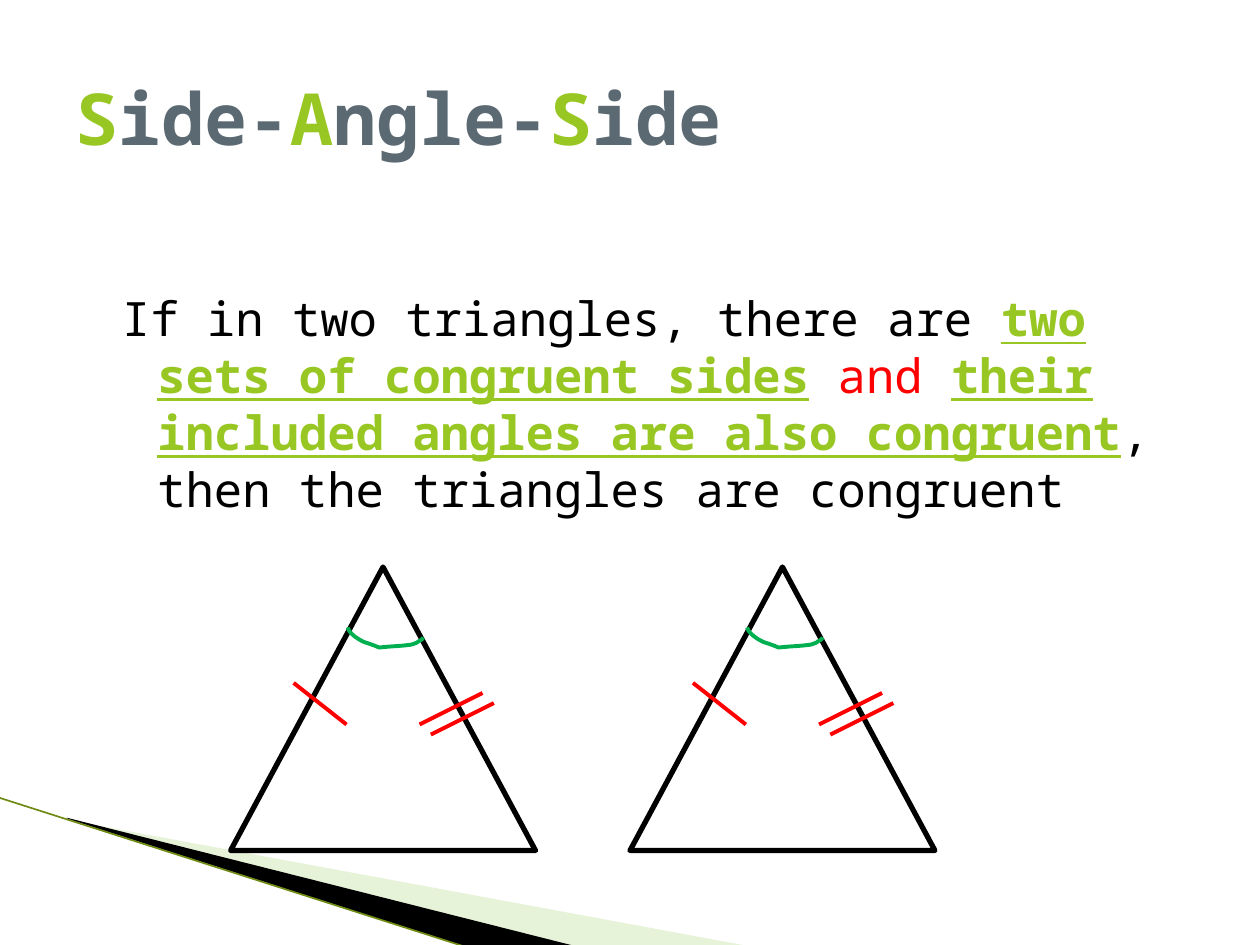
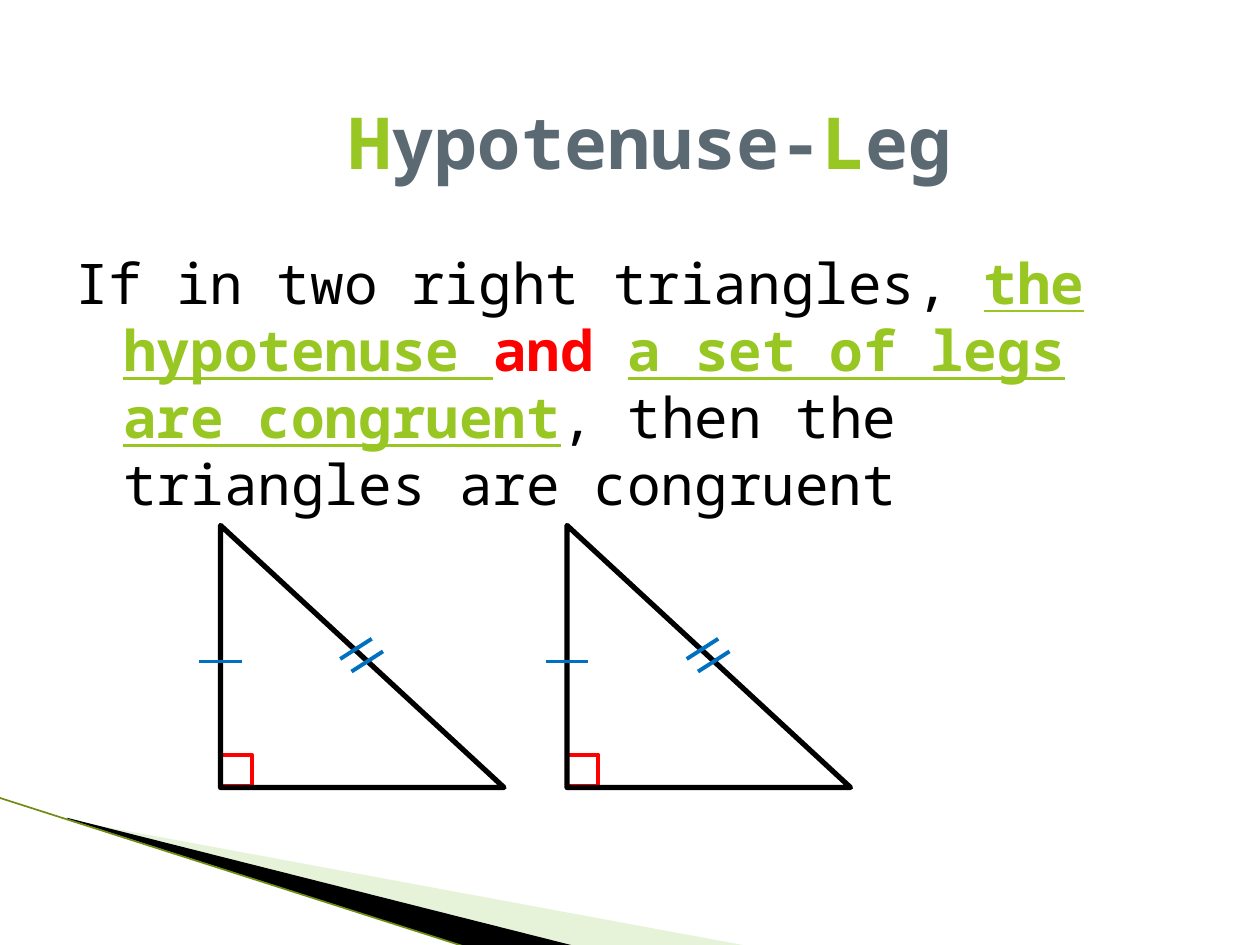
from lxml import etree
from pptx import Presentation
from pptx.dml.color import RGBColor
from pptx.enum import shapes, text
from pptx.oxml.ns import qn
from pptx.util import Inches, Pt

FONT = "Noto Sans Mono"
BLACK = RGBColor(0x00, 0x00, 0x00)
SLATE = RGBColor(0x5B, 0x69, 0x73)
LIME = RGBColor(0x98, 0xC7, 0x23)
PALE = RGBColor(0xC5, 0xE1, 0x9F)
OLIVE = RGBColor(0x6E, 0x8B, 0x14)
RED = RGBColor(0xFF, 0x00, 0x00)
GREEN = RGBColor(0x00, 0xB0, 0x50)
BLUE = RGBColor(0x00, 0x70, 0xC0)

PLAIN = {"color": BLACK}
KEY = {"color": LIME, "bold": True, "underline": True}
CAPITAL = {"color": LIME, "bold": True}
REST = {"color": SLATE, "bold": True}


def add_text(s, box, size, runs, anchor, indent=(0, 0)):
    """One paragraph of formatted runs; indent is (left margin, first line)."""
    tf = s.shapes.add_textbox(*map(Inches, box)).text_frame
    tf.word_wrap = True
    tf.vertical_anchor = anchor
    p = tf.paragraphs[0]
    pPr = p._p.get_or_add_pPr()
    pPr.set("marL", str(Inches(indent[0])))
    pPr.set("indent", str(Inches(indent[1])))
    for words, form in runs:
        r = p.add_run()
        r.text = words
        for name, value in {"name": FONT, "size": Pt(size), **form}.items():
            if name == "color":
                r.font.color.rgb = value
            else:
                setattr(r.font, name, value)


def add_outline(s, kind, geometry, color, width):
    """Unfilled line, preset shape or open path, with coordinates in inches."""
    if kind == "line":
        sp = s.shapes.add_connector(shapes.MSO_CONNECTOR.STRAIGHT, *map(Inches, geometry))
        etree.SubElement(sp._element.spPr, qn("a:effectLst"))
    else:
        if kind == "path":
            pts = [(Inches(x), Inches(y)) for x, y in geometry]
            fb = s.shapes.build_freeform(*pts[0], scale=1.0)
            fb.add_line_segments(pts[1:], close=False)
            sp = fb.convert_to_shape()
        else:
            sp = s.shapes.add_shape(kind, *map(Inches, geometry))
        sp.fill.background()
        sp.shadow.inherit = False
    sp.line.color.rgb = color
    sp.line.width = Pt(width)


prs = Presentation()
prs.slide_width, prs.slide_height = Inches(10), Inches(7.5)

# Shared corner sweep: two wedges and a thin edge line
WEDGES = [
    ([(0.55, 6.51), (5.95, 7.51), (4.56, 7.51), (0.55, 6.5)], PALE, 40),
    ([(0.53, 6.49), (4.57, 7.51), (3.72, 7.52), (0.54, 6.5)], BLACK, 100),
]
slides = []
for _ in range(2):
    s = prs.slides.add_slide(prs.slide_layouts[6])
    for points, color, opacity in WEDGES:
        pts = [(Inches(x), Inches(y)) for x, y in points]
        fb = s.shapes.build_freeform(*pts[0], scale=1.0)
        fb.add_line_segments(pts[1:], close=True)
        sp = fb.convert_to_shape()
        sp.shadow.inherit = False
        sp.line.fill.background()
        sp.fill.solid()
        sp.fill.fore_color.rgb = color
        if opacity < 100:
            clr = sp._element.spPr.find(qn("a:solidFill"))[0]
            etree.SubElement(clr, qn("a:alpha")).set("val", str(opacity * 1000))
    add_outline(s, "line", (-0.01, 6.33, 3.71, 7.52), OLIVE, 0.95)
    slides.append(s)
sas, hl = slides

# Slide 1: text
add_text(sas, (0.75, 2.25, 8.5, 2.58), 27, [
    ("If in two triangles, there are ", PLAIN),
    ("two sets of congruent sides", KEY),
    (" ", CAPITAL),
    ("and ", {"color": RED}),
    ("their included angles are also congruent", KEY),
    (", then the triangles are congruent", PLAIN),
], text.MSO_ANCHOR.TOP, (0.4, -0.28))
add_text(sas, (0.5, 0.3, 9, 1.25), 41, [
    ("S", CAPITAL), ("ide-", REST), ("A", CAPITAL), ("ngle-", REST),
    ("S", CAPITAL), ("ide", REST),
], text.MSO_ANCHOR.MIDDLE)

# Angle mark: cubic curves sampled into short segments
CURVES = [
    [(2.76, 4.98), (2.77, 5.03), (2.85, 5.08), (2.9, 5.1)],
    [(2.9, 5.1), (2.94, 5.11), (3.01, 5.14), (3.01, 5.14)],
    [(3.01, 5.14), (3.09, 5.13), (3.16, 5.13), (3.24, 5.12)],
    [(3.24, 5.12), (3.27, 5.12), (3.31, 5.1), (3.31, 5.1)],
    [(3.31, 5.1), (3.35, 5.07), (3.34, 5.09), (3.36, 5.06)],
]
STEPS = 6
arc = [CURVES[0][0]]
for curve in CURVES:
    for i in range(1, STEPS + 1):
        t = i / STEPS
        weights = ((1 - t) ** 3, 3 * t * (1 - t) ** 2, 3 * t * t * (1 - t), t ** 3)
        arc.append(tuple(sum(w * c for w, c in zip(weights, axis)) for axis in zip(*curve)))

# Slide 1: two congruent triangles
SIDE_TICKS = [(2.33, 5.42, 2.75, 5.75), (3.33, 5.75, 3.83, 5.5), (3.42, 5.83, 3.92, 5.58)]
for dx in (0, 3.17):
    add_outline(sas, shapes.MSO_SHAPE.ISOSCELES_TRIANGLE, (1.83 + dx, 4.5, 2.42, 2.25), BLACK, 3)
    for x1, y1, x2, y2 in SIDE_TICKS:
        add_outline(sas, "line", (x1 + dx, y1, x2 + dx, y2), RED, 2.25)
    add_outline(sas, "path", [(x + dx, y) for x, y in arc], GREEN, 2.25)

# Slide 2: title
add_text(hl, (2.67, 0.58, 7.17, 1.08), 41, [
    ("H", CAPITAL), ("ypotenuse-", REST), ("L", CAPITAL), ("eg", REST),
], text.MSO_ANCHOR.MIDDLE)

# Slide 2: two congruent right triangles
LEG_TICKS = [(1.58, 5.25, 1.92, 5.25), (2.7, 5.23, 2.95, 5.07), (2.79, 5.33, 3.04, 5.17)]
for dx in (0, 2.75):
    add_outline(hl, shapes.MSO_SHAPE.RECTANGLE, (1.75 + dx, 5.99, 0.25, 0.25), RED, 2.25)
    add_outline(hl, shapes.MSO_SHAPE.RIGHT_TRIANGLE, (1.75 + dx, 4.17, 2.25, 2.08), BLACK, 3)
    for x1, y1, x2, y2 in LEG_TICKS:
        add_outline(hl, "line", (x1 + dx, y1, x2 + dx, y2), BLUE, 2.25)

# Slide 2: statement
add_text(hl, (0.5, 1.92, 8.5, 2), 32, [
    ("If in two right triangles, ", PLAIN),
    ("the hypotenuse ", KEY),
    ("and ", {"color": RED, "bold": True}),
    ("a set of legs are congruent", KEY),
    (", then the triangles are congruent", PLAIN),
], text.MSO_ANCHOR.TOP, (0.38, -0.38))

prs.save("out.pptx")
